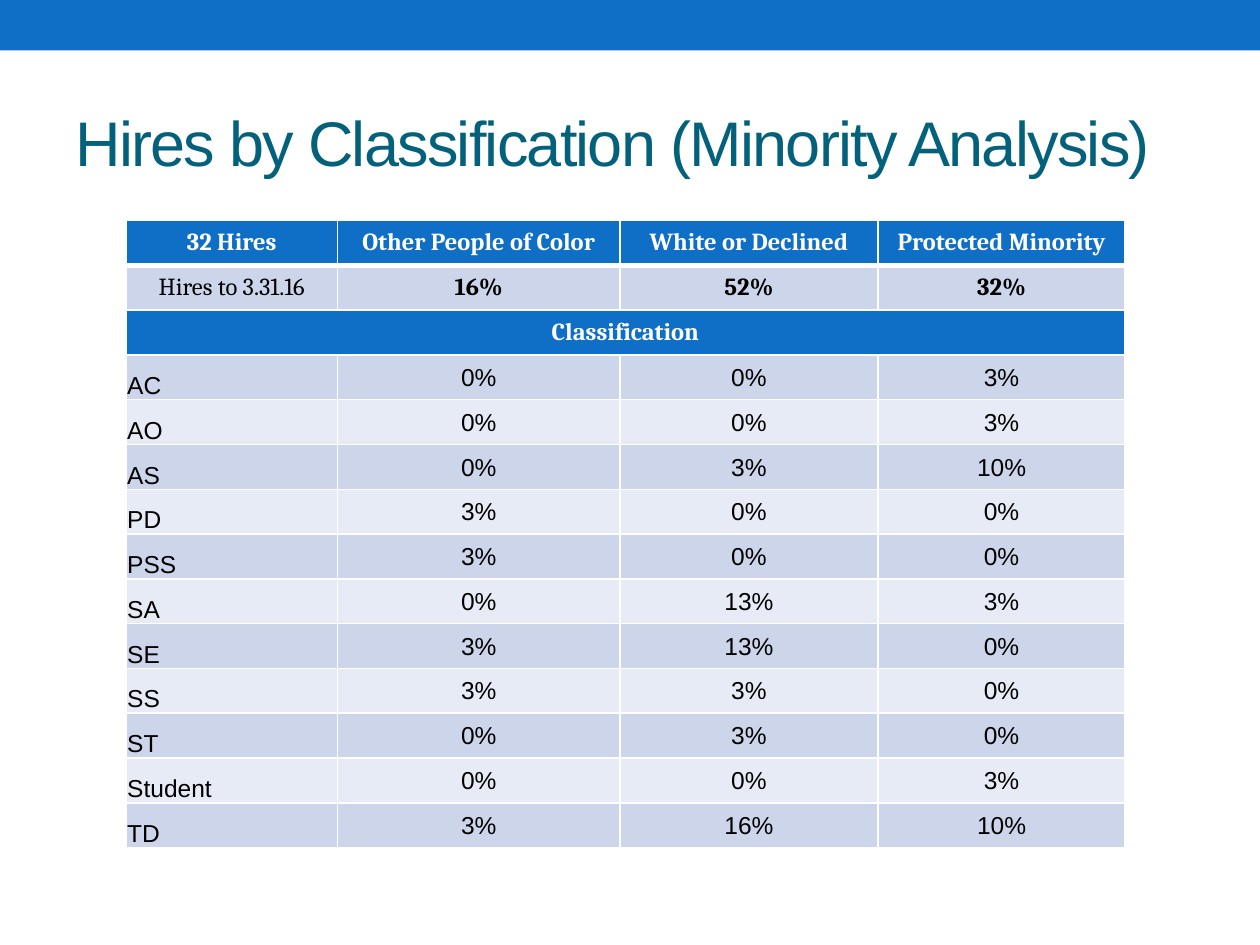
from lxml import etree
from pptx import Presentation
from pptx import util as u
from pptx.dml.color import RGBColor
from pptx.enum import shapes, text
from pptx.oxml.ns import qn

WIDTH, HEIGHT = u.Inches(10), u.Inches(7.5)
COLORS = {
    "blue": "0F6FC6",
    "title": "04617B",
    "band_dark": "CCD5EA",
    "band_light": "E7EBF5",
    "white": "FFFFFF",
    "black": "000000",
}
COLUMN_WIDTHS = (1.68, 2.24, 2.05, 1.96)
TABLE_HEIGHT = 4.98
HEADINGS = ("32 Hires", "Other People of Color", "White or Declined", "Protected Minority")
TOTALS = ("Hires to 3.31.16", 16, 52, 32)
CLASSIFICATIONS = (
    ("AC", 0, 0, 3),
    ("AO", 0, 0, 3),
    ("AS", 0, 3, 10),
    ("PD", 3, 0, 0),
    ("PSS", 3, 0, 0),
    ("SA", 0, 13, 3),
    ("SE", 3, 13, 0),
    ("SS", 3, 3, 0),
    ("ST", 0, 3, 0),
    ("Student", 0, 0, 3),
    ("TD", 3, 16, 10),
)


def color(name):
    return RGBColor.from_string(COLORS[name])


def style_run(run, font, size, ink, bold=False):
    run.font.name = font
    run.font.size = u.Pt(size)
    run.font.bold = bold
    run.font.color.rgb = color(ink)


def set_borders(cell, bottom=1):
    """Draw white cell borders, placed before the fill as the schema asks."""
    properties = cell._tc.get_or_add_tcPr()
    for index, (side, width) in enumerate((("L", 1), ("R", 1), ("T", 1), ("B", bottom))):
        line = etree.Element(qn(f"a:ln{side}"), w=str(u.Pt(width)))
        fill = etree.SubElement(line, qn("a:solidFill"))
        etree.SubElement(fill, qn("a:srgbClr"), val=COLORS["white"])
        properties.insert(index, line)


def set_margins(cell, left, top, right, bottom):
    cell.margin_left, cell.margin_top = u.Inches(left), u.Inches(top)
    cell.margin_right, cell.margin_bottom = u.Inches(right), u.Inches(bottom)


def fill_cell(cell, value, fill, font="Cambria", ink="black", bold=False, bottom=1):
    cell.fill.solid()
    cell.fill.fore_color.rgb = color(fill)
    set_borders(cell, bottom)
    cell.vertical_anchor = text.MSO_ANCHOR.MIDDLE
    cell.text_frame.text = value if isinstance(value, str) else f"{value}%"
    paragraph = cell.text_frame.paragraphs[0]
    paragraph.alignment = text.PP_ALIGN.CENTER
    for run in paragraph.runs:
        style_run(run, font, 14, ink, bold)


def add_top_band(slide):
    band = slide.shapes.add_shape(shapes.MSO_SHAPE.RECTANGLE, 0, 0, WIDTH, u.Inches(0.4))
    band.shadow.inherit = False
    band.fill.solid()
    band.fill.fore_color.rgb = color("blue")
    band.line.fill.background()


def add_title(slide, wording):
    title = slide.shapes.add_textbox(
        int(WIDTH * 0.05), u.Inches(0.58), int(WIDTH * 0.9), u.Inches(1.08))
    frame = title.text_frame
    frame.word_wrap = True
    frame.vertical_anchor = text.MSO_ANCHOR.MIDDLE
    frame.text = wording
    run = frame.paragraphs[0].runs[0]
    style_run(run, "Arial", 36, "title")
    run.font._element.set("spc", "-100")  # letters one point closer


def add_hires_table(slide):
    row_count = 3 + len(CLASSIFICATIONS)
    hires = slide.shapes.add_table(
        row_count, len(COLUMN_WIDTHS), int(WIDTH * 0.1), u.Inches(1.75),
        u.Inches(sum(COLUMN_WIDTHS)), u.Inches(TABLE_HEIGHT)).table
    for column, width in zip(hires.columns, COLUMN_WIDTHS):
        column.width = u.Inches(width)
    for row in hires.rows:
        row.height = u.Inches(TABLE_HEIGHT / row_count)

    # Headings and totals
    for column, (heading, total) in enumerate(zip(HEADINGS, TOTALS)):
        fill_cell(hires.cell(0, column), heading, "blue", ink="white", bold=True, bottom=3)
        fill_cell(hires.cell(1, column), total, "band_dark", bold=column > 0)

    # Section heading across all columns
    section = hires.cell(2, 0)
    section.merge(hires.cell(2, len(COLUMN_WIDTHS) - 1))
    fill_cell(section, "Classification", "blue", ink="white", bold=True)
    for column in range(1, len(COLUMN_WIDTHS)):
        covered = hires.cell(2, column)
        fill_cell(covered, "", "blue")
        set_margins(covered, 0, 0, 0, 0)

    # One banded row per classification
    for index, record in enumerate(CLASSIFICATIONS):
        band = "band_light" if index % 2 else "band_dark"
        for column, value in enumerate(record):
            cell = hires.cell(3 + index, column)
            fill_cell(cell, value, band, font="Arial")
            set_margins(cell, 0.01, 0.01, 0.01, 0)
        label = hires.cell(3 + index, 0)
        label.vertical_anchor = text.MSO_ANCHOR.BOTTOM
        label.text_frame.paragraphs[0].alignment = text.PP_ALIGN.LEFT


def main():
    deck = Presentation()
    deck.slide_width, deck.slide_height = WIDTH, HEIGHT
    slide = deck.slides.add_slide(deck.slide_layouts[6])
    add_top_band(slide)
    add_title(slide, "Hires by Classification (Minority Analysis)")
    add_hires_table(slide)
    deck.save("out.pptx")


if __name__ == "__main__":
    main()
